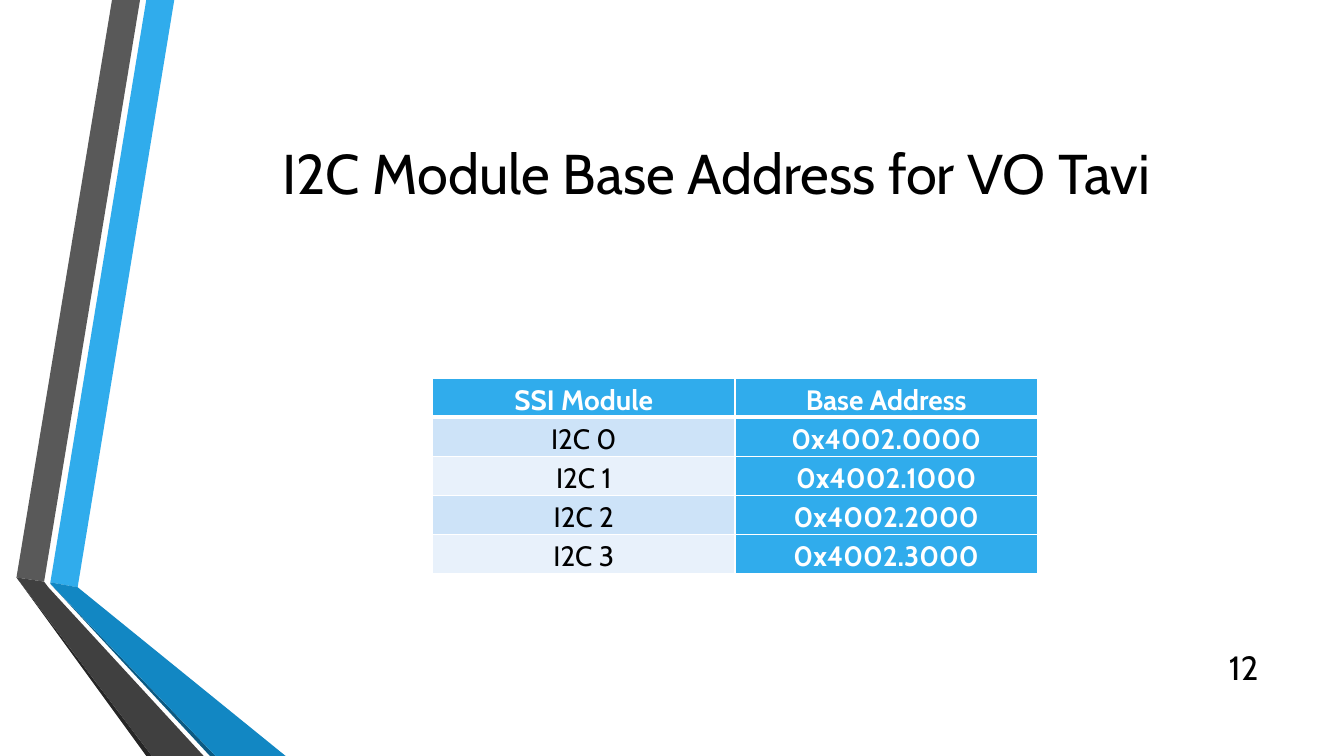
import pptx
import pptx.dml.color
import pptx.enum.text
import pptx.oxml
import pptx.oxml.ns
import pptx.util

Pt = pptx.util.Pt
ALIGN = pptx.enum.text.PP_ALIGN
MIDDLE = pptx.enum.text.MSO_ANCHOR.MIDDLE
FONT = "Cabin"
BLACK, WHITE, BLUE = "000000", "FFFFFF", "30ACEC"
BANDS = ["CDE3F8", "E8F1FB"]

# Ribbon outlines, in points from the corner of the ribbon's box
RIBBONS = [
    (BLUE, [(36, 416), (55.5, 419.5), (124.5, 0), (104.5, 0)]),
    ("595959", [(100, 0), (80, 0), (11.75, 412.5), (31.5, 415.5)]),
    ("262626", [(11.75, 412.5), (104.5, 540), (108.5, 540)]),
    ("0C5A82", [(36, 417), (150, 540), (154, 540)]),
    ("1287C3", [(36, 416), (36, 417), (154, 540), (204, 540), (55.5, 419.5)]),
    ("404040", [(145.5, 540), (34.5, 419.5), (31.5, 415.5), (11.75, 412.5), (108.5, 540)]),
]
ROWS = [("SSI Module", "Base Address")] + [
    (f"I2C {n}", f"0x4002.{n}000") for n in range(4)
]


def rgb(value):
    return pptx.dml.color.RGBColor.from_string(value)


def write(tf, text, size, color, align, bold=False):
    tf.text = text
    p = tf.paragraphs[0]
    p.alignment = align
    p.font.name, p.font.size, p.font.bold = FONT, Pt(size), bold
    p.font.color.rgb = rgb(color)
    return p


def add_ribbons(s, left, top):
    for color, points in RIBBONS:
        corners = [(Pt(left + x), Pt(top + y)) for x, y in points]
        builder = s.shapes.build_freeform(*corners[0])
        builder.add_line_segments(corners[1:], close=True)
        sp = builder.convert_to_shape()
        sp.shadow.inherit = False
        sp.fill.solid()
        sp.fill.fore_color.rgb = rgb(color)
        sp.line.fill.background()


def add_title(s, left, top, width, height, text):
    sp = s.shapes.title
    sp.left, sp.top, sp.width, sp.height = Pt(left), Pt(top), Pt(width), Pt(height)
    sp.text_frame.vertical_anchor = MIDDLE
    write(sp.text_frame, text, 40, BLACK, ALIGN.CENTER)


def add_page_number(s, left, top, width, height, text):
    tf = s.shapes.add_textbox(Pt(left), Pt(top), Pt(width), Pt(height)).text_frame
    tf.word_wrap = True
    tf.vertical_anchor = MIDDLE
    write(tf, text, 24, BLACK, ALIGN.RIGHT)


def set_borders(cell, widths):
    tcPr = cell._tc.get_or_add_tcPr()
    for side, width in widths.items():
        tcPr.append(pptx.oxml.parse_xml(
            f'<a:ln{side} {pptx.oxml.ns.nsdecls("a")} w="{Pt(width)}"><a:solidFill>'
            f'<a:srgbClr val="{WHITE}"/></a:solidFill></a:ln{side}>'))


def add_address_table(s, left, top, width, row_height):
    frame = s.shapes.add_table(len(ROWS), 2, Pt(left), Pt(top), Pt(width),
                               Pt(row_height * len(ROWS)))
    for i, row in enumerate(ROWS):
        for j, text in enumerate(row):
            cell = frame.table.cell(i, j)
            strong = i == 0 or j == 1  # header row and address column
            cell.margin_left = cell.margin_right = Pt(5)
            cell.margin_top = cell.margin_bottom = 0
            p = write(cell.text_frame, text, 20, WHITE if strong else BLACK,
                      ALIGN.CENTER, strong)
            p.line_spacing = 1.15
            set_borders(cell, {"L": 1, "R": 1, "T": 3 if i == 1 else 1,
                               "B": 3 if i == 0 else 1})
            cell.fill.solid()
            cell.fill.fore_color.rgb = rgb(BLUE if strong else BANDS[(i - 1) % 2])


def main():
    prs = pptx.Presentation()
    prs.slide_width, prs.slide_height = Pt(960), Pt(540)
    s = prs.slides.add_slide(prs.slide_layouts[5])
    add_ribbons(s, 0, 0)
    add_title(s, 117, 54, 789, 138, "I2C Module Base Address for VO Tavi")
    add_page_number(s, 862.5, 462, 43.5, 29, "12")
    add_address_table(s, 309, 270, 432, 28)
    prs.save("out.pptx")


if __name__ == "__main__":
    main()
